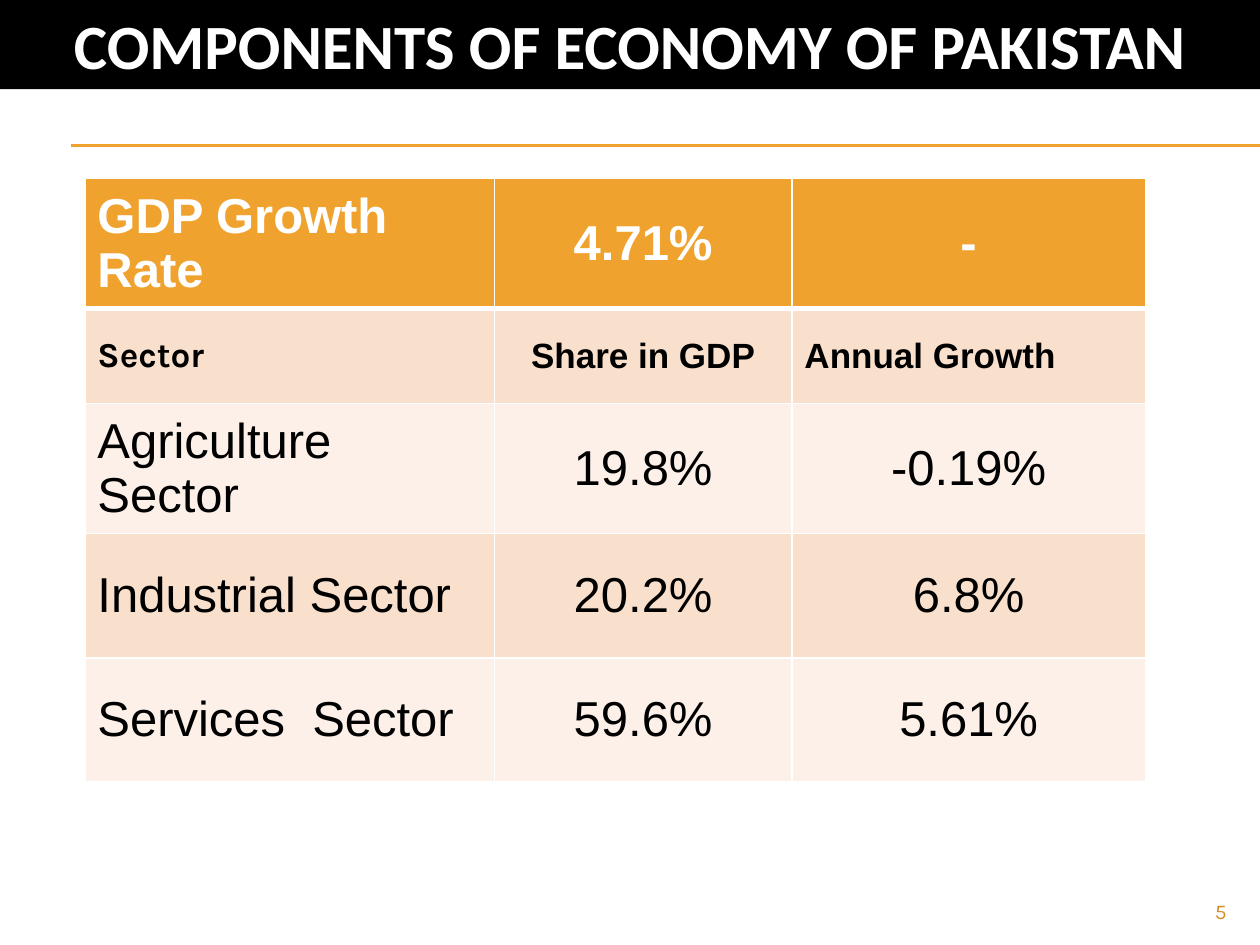
import pptx
import pptx.dml.color
import pptx.enum.shapes
import pptx.enum.text
import pptx.oxml.ns
import pptx.util
import lxml.etree

Pt = pptx.util.Pt
ALIGN = pptx.enum.text.PP_ALIGN
MIDDLE = pptx.enum.text.MSO_ANCHOR.MIDDLE
GOLD, DARK, LIGHT = "F0A22E", "F9E0CD", "FCF0E8"


def color(code):
    return pptx.dml.color.RGBColor.from_string(code)


class Deck:
    """Holds the style and the current slide."""

    font = "Arial"

    def __init__(self, wide, high):
        self.prs = pptx.Presentation()
        self.prs.slide_width, self.prs.slide_height = Pt(wide), Pt(high)
        self.slide = self.prs.slides.add_slide(self.prs.slide_layouts[5])

    def words(self, frame, text, size, tint, bold=False, align=ALIGN.LEFT, font=None):
        frame.text = text
        para = frame.paragraphs[0]
        para.alignment = align
        for run in para.runs:
            run.font.name = font or self.font
            run.font.size = Pt(size)
            run.font.bold = bold
            run.font.color.rgb = color(tint)

    def place(self, shape, box):
        shape.left, shape.top, shape.width, shape.height = map(Pt, box)

    def title(self, text, box):
        shape = self.slide.shapes.title
        self.place(shape, box)
        shape.fill.solid()
        shape.fill.fore_color.rgb = color("000000")
        frame = shape.text_frame
        frame.auto_size = pptx.enum.text.MSO_AUTO_SIZE.NONE
        frame.vertical_anchor = MIDDLE
        self.words(frame, text, 36, "FFFFFF", True, ALIGN.CENTER, "Calibri")

    def rule(self, left, right, top):
        kind = pptx.enum.shapes.MSO_CONNECTOR.STRAIGHT
        line = self.slide.shapes.add_connector(kind, Pt(left), Pt(top), Pt(right), Pt(top))
        line.line.color.rgb = color(GOLD)
        line.line.width = Pt(0.75)
        props = line._element.spPr
        lxml.etree.SubElement(props, pptx.oxml.ns.qn("a:effectLst"))

    def label(self, text, box, size, tint):
        frame = self.slide.shapes.add_textbox(*map(Pt, box)).text_frame
        frame.word_wrap = True
        self.words(frame, text, size, tint, align=ALIGN.RIGHT, font="Karla")

    def border(self, cell, side, width):
        qn = pptx.oxml.ns.qn
        props = cell._tc.get_or_add_tcPr()
        line = lxml.etree.SubElement(props, qn("a:ln" + side), w=str(Pt(width)))
        fill = lxml.etree.SubElement(line, qn("a:solidFill"))
        lxml.etree.SubElement(fill, qn("a:srgbClr"), val="FFFFFF")

    def cell(self, cell, fill, under, over):
        cell.vertical_anchor = MIDDLE
        for side, width in zip("LRTB", (1, 1, over, under)):
            self.border(cell, side, width)
        cell.fill.solid()
        cell.fill.fore_color.rgb = color(fill)

    def table(self, rows, box, widths, heights):
        grid = self.slide.shapes.add_table(len(rows), len(widths), *map(Pt, box)).table
        for col, width in zip(grid.columns, widths):
            col.width = Pt(width)
        for row, height in zip(grid.rows, heights):
            row.height = Pt(height)
        for r, row in enumerate(rows):
            fill = GOLD if r == 0 else DARK if r % 2 else LIGHT
            for c, text in enumerate(row):
                cell = grid.cell(r, c)
                self.cell(cell, fill, 3 if r == 0 else 1, 3 if r == 1 else 1)
                # Figures are centred; the second row holds small headings
                left = c == 0 or (r, c) == (1, 2)
                self.words(cell.text_frame, text, 20 if r == 1 else 28,
                           "FFFFFF" if r == 0 else "000000", r < 2,
                           ALIGN.LEFT if left else ALIGN.CENTER,
                           "Karla" if (r, c) == (1, 0) else None)


def main():
    deck = Deck(720, 540)

    # Title band and double rule
    deck.title("COMPONENTS OF ECONOMY OF PAKISTAN", (0, 0, 720, 51))
    for top in (82.8, 83.5):
        deck.rule(40.5, 720, top)

    # Page number
    deck.label("5", (648, 510, 60, 19), 12, "D48F29")

    # Sector table
    rows = [
        ("GDP Growth Rate", "4.71%", "-"),
        ("Sector", "Share in GDP", "Annual Growth"),
        ("Agriculture Sector", "19.8%", "-0.19%"),
        ("Industrial Sector", "20.2%", "6.8%"),
        ("Services  Sector", "59.6%", "5.61%"),
    ]
    widths, heights = (234, 170, 202), (66, 54, 71, 71, 71)
    deck.table(rows, (48.5, 102, sum(widths), sum(heights)), widths, heights)

    deck.prs.save("out.pptx")


if __name__ == "__main__":
    main()
